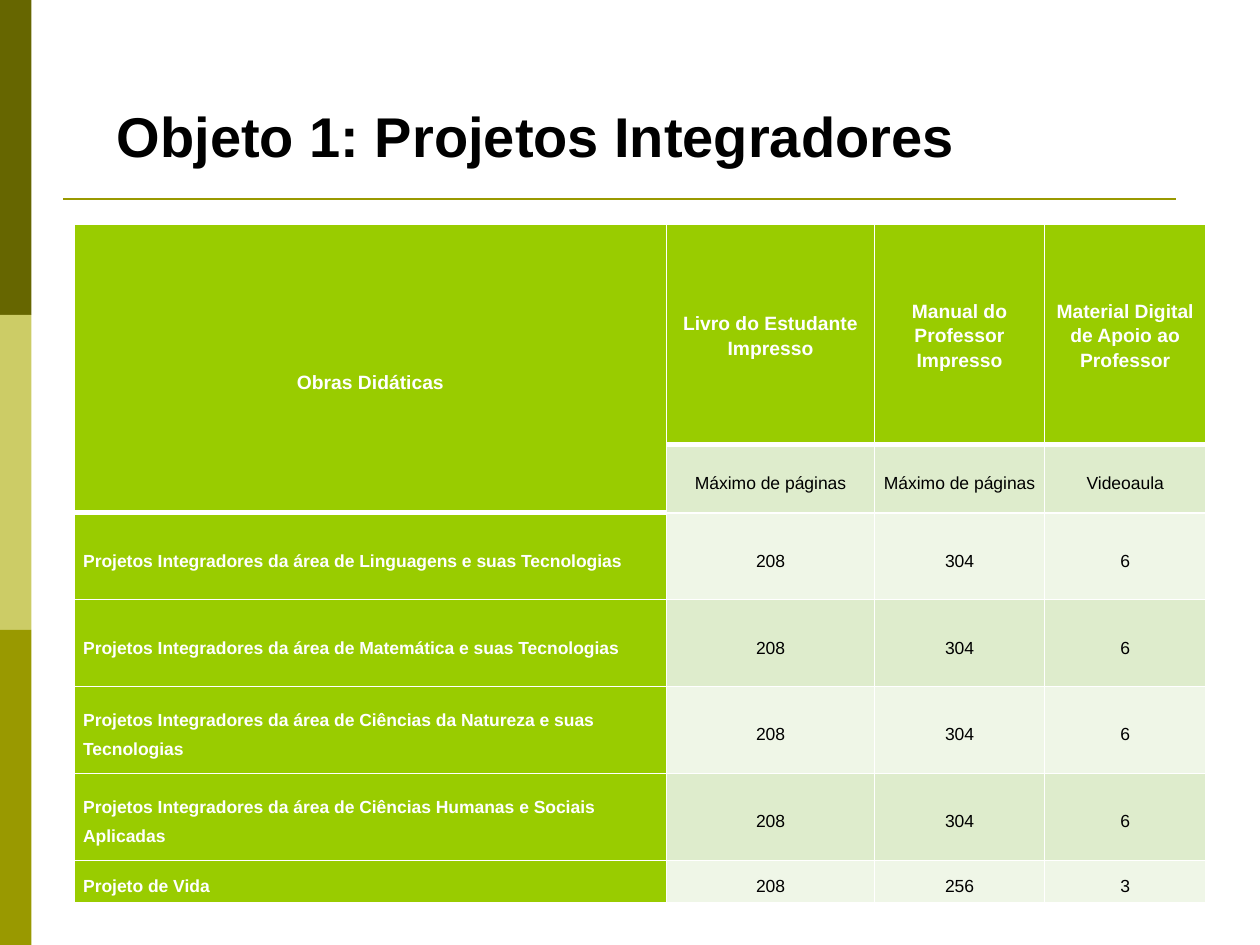
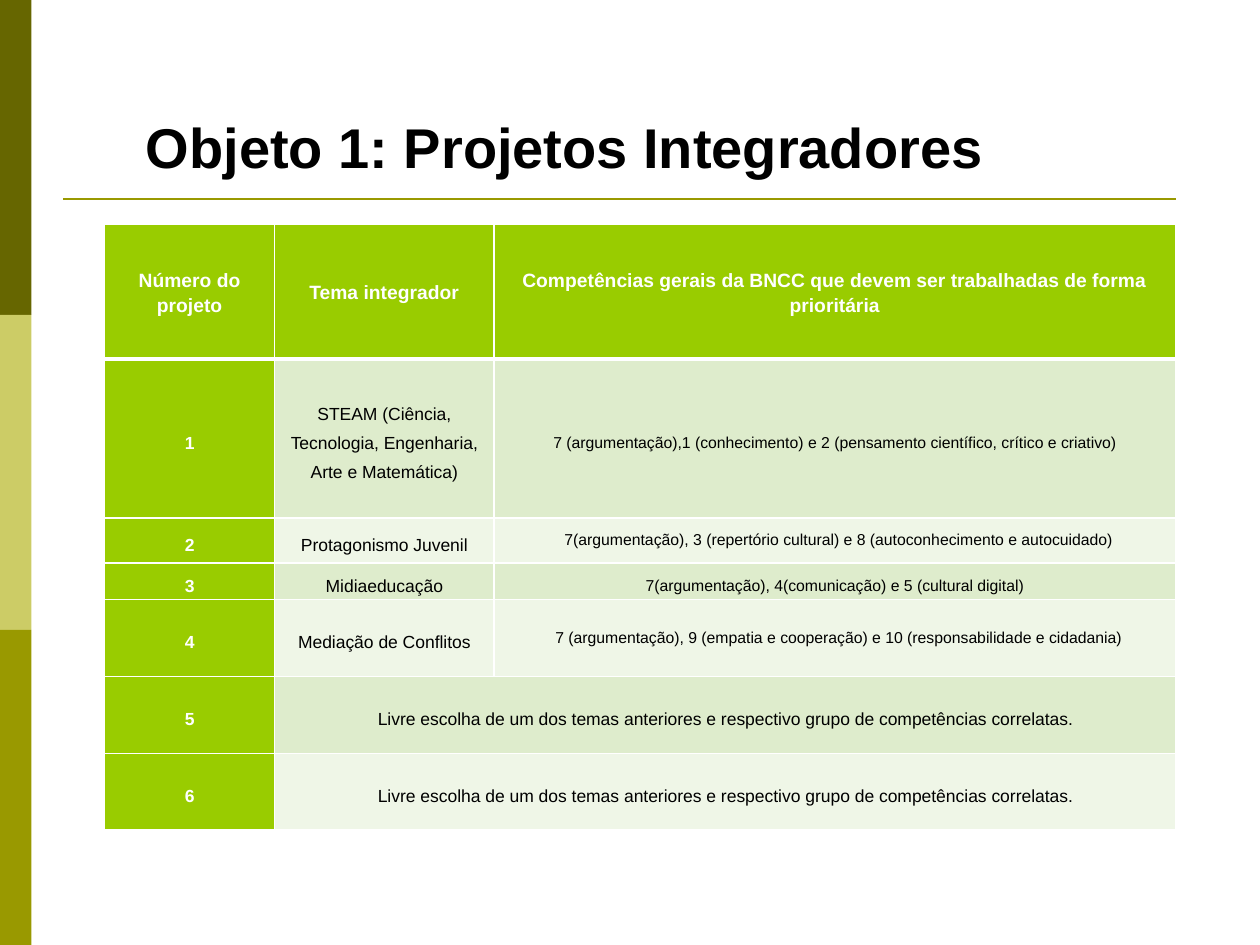
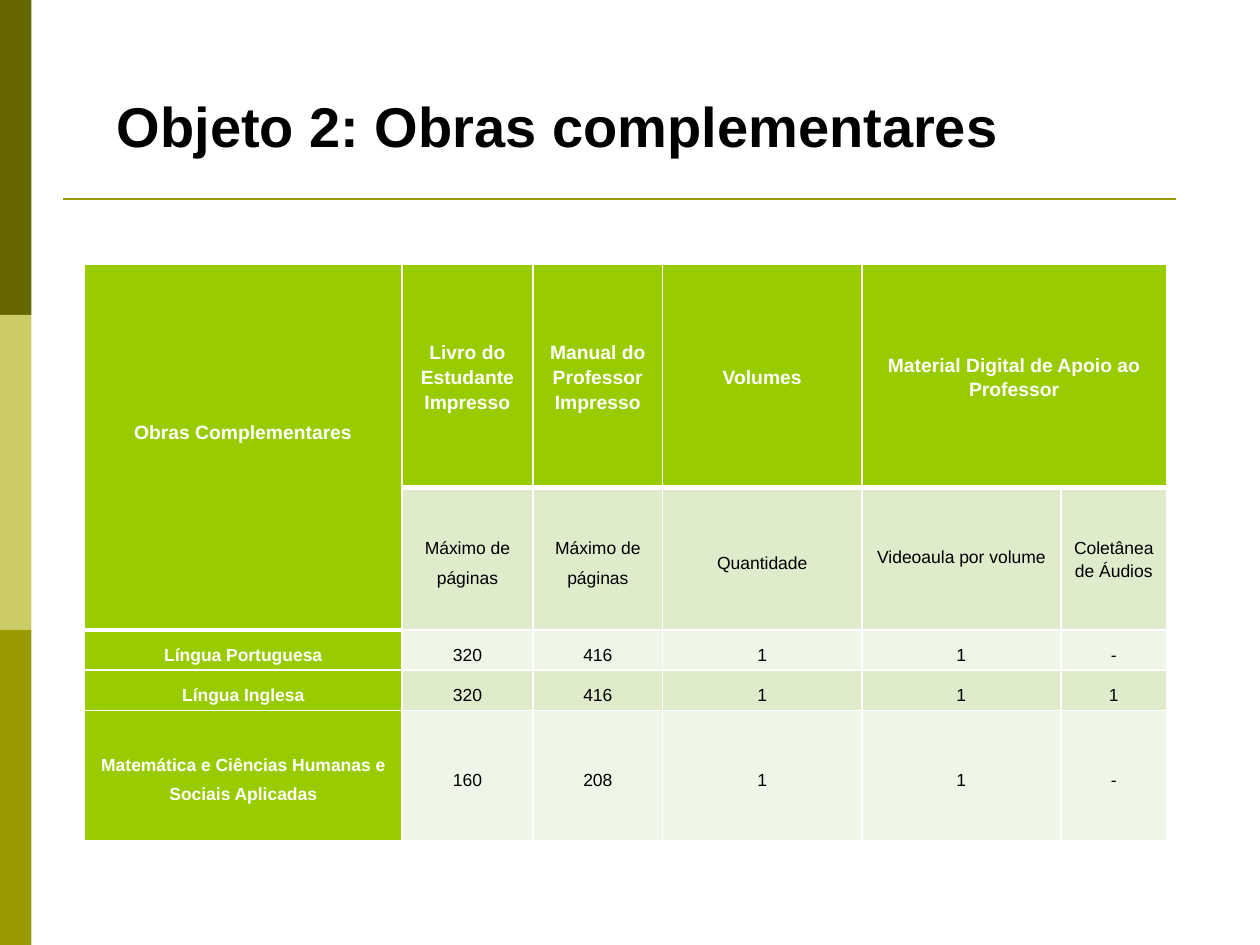
"""Builds three slides of tables on the objects of a textbook programme."""
from dataclasses import dataclass

from lxml import etree
from pptx import Presentation
from pptx.dml.color import RGBColor
from pptx.enum.shapes import MSO_CONNECTOR, MSO_SHAPE
from pptx.enum.text import MSO_ANCHOR, MSO_AUTO_SIZE, PP_ALIGN
from pptx.oxml.ns import qn
from pptx.util import Inches, Pt

RECT = MSO_SHAPE.RECTANGLE
STRAIGHT = MSO_CONNECTOR.STRAIGHT
MIDDLE = MSO_ANCHOR.MIDDLE
GROW = MSO_AUTO_SIZE.SHAPE_TO_FIT_TEXT
LEFT, CENTER = PP_ALIGN.LEFT, PP_ALIGN.CENTER


@dataclass(frozen=True)
class Theme:
    font: str = "Arial"
    bands: tuple = ("666600", "CCCC66", "999900")
    rule: str = "999900"
    head: str = "99CC00"
    stripes: tuple = ("EFF6E7", "DEECCC")
    light: str = "FFFFFF"
    dark: str = "000000"
    title_size: int = 32
    head_size: int = 11
    body_size: int = 10
    note_size: int = 9


T = Theme()


def style_text(p, size, color, bold):
    for r in p.runs:
        r.font.name, r.font.size, r.font.bold = T.font, Pt(size), bold
        r.font.color.rgb = RGBColor.from_string(color)


def add_borders(cell):
    for side, width in (("L", 1), ("R", 1), ("T", 1), ("B", 3)):
        ln = etree.SubElement(cell._tc.get_or_add_tcPr(), qn(f"a:ln{side}"), w=str(Pt(width)))
        fill = etree.SubElement(ln, qn("a:solidFill"))
        etree.SubElement(fill, qn("a:srgbClr"), val=T.light)


FREE_CHOICE = "Livre escolha de um dos temas anteriores e respectivo grupo de competências correlatas."
AREA = "Projetos Integradores da área de "

SLIDES = [
    dict(
        title="Objeto 1: Projetos Integradores", title_box=(0.83, 0.76, 8.27, 0.64),
        origin=(0.59, 1.78), cols=[4.7, 1.65, 1.35, 1.28],
        heights=[1.75, 0.54] + [0.69] * 4 + [0.34],
        first_align=LEFT, sizes={}, merges=[(0, 0, 1, 0)],
        special={(0, 0): dict(margin_top=0.2)},
        rows=[
            ["Obras Didáticas", "Livro do Estudante Impresso", "Manual do Professor Impresso",
             "Material Digital de Apoio ao Professor"],
            ["", "Máximo de páginas", "Máximo de páginas", "Videoaula"],
            [AREA + "Linguagens e suas Tecnologias", "208", "304", "6"],
            [AREA + "Matemática e suas Tecnologias", "208", "304", "6"],
            [AREA + "Ciências da Natureza e suas Tecnologias", "208", "304", "6"],
            [AREA + "Ciências Humanas e Sociais Aplicadas", "208", "304", "6"],
            ["Projeto de Vida", "208", "256", "3"],
        ],
    ),
    dict(
        title="Objeto 1: Projetos Integradores", title_box=(1.06, 0.84, 7.56, 0.64),
        origin=(0.83, 1.78), cols=[1.35, 1.74, 5.41],
        heights=[1.07, 1.26, 0.36, 0.29] + [0.61] * 3,
        first_align=CENTER, sizes={2: T.note_size}, merges=[(5, 1, 5, 2), (6, 1, 6, 2)],
        special={(r, 2): dict(spacing=Pt(9.9), margin_left=0.13) for r in (2, 4)},
        rows=[
            ["Número do projeto", "Tema integrador",
             "Competências gerais da BNCC que devem ser trabalhadas de forma prioritária"],
            ["1", "STEAM (Ciência, Tecnologia, Engenharia, Arte e Matemática)",
             "7 (argumentação),1 (conhecimento) e 2 (pensamento científico, crítico e criativo)"],
            ["2", "Protagonismo Juvenil",
             "7(argumentação), 3 (repertório cultural) e 8 (autoconhecimento e autocuidado)"],
            ["3", "Midiaeducação", "7(argumentação), 4(comunicação) e 5 (cultural digital)"],
            ["4", "Mediação de Conflitos",
             "7 (argumentação), 9 (empatia e cooperação) e 10 (responsabilidade e cidadania)"],
            ["5", FREE_CHOICE, ""],
            ["6", FREE_CHOICE, ""],
        ],
    ),
    dict(
        title="Objeto 2: Obras complementares", title_box=(0.83, 0.68, 7.64, 0.64),
        origin=(0.67, 2.1), cols=[2.52, 1.04, 1.03, 1.58, 1.58, 0.84],
        heights=[1.77, 1.13, 0.32, 0.32, 1.03],
        first_align=CENTER, sizes={}, merges=[(0, 0, 1, 0), (0, 4, 0, 5)],
        special={(0, 0): dict(margin_bottom=0.26),
                 (1, 4): dict(spacing=1.15, margin_bottom=0.05),
                 (1, 5): dict(spacing=1.15)},
        rows=[
            ["Obras Complementares", "Livro do Estudante Impresso", "Manual do Professor Impresso",
             "Volumes", "Material Digital de Apoio ao Professor", ""],
            ["", "Máximo de páginas", "Máximo de páginas", "Quantidade", "Videoaula por volume",
             "Coletânea de Áudios"],
            ["Língua Portuguesa", "320", "416", "1", "1", "-"],
            ["Língua Inglesa", "320", "416", "1", "1", "1"],
            ["Matemática e Ciências Humanas e Sociais Aplicadas", "160", "208", "1", "1", "-"],
        ],
    ),
]

prs = Presentation()
prs.slide_width, prs.slide_height = Inches(10), Inches(7.5)
W, H = prs.slide_width, prs.slide_height
band_w, band_h = W // 40, H // len(T.bands)

for d in SLIDES:
    s = prs.slides.add_slide(prs.slide_layouts[6])

    for i, color in enumerate(T.bands):
        sp = s.shapes.add_shape(RECT, 0, i * band_h, band_w, band_h)
        sp.shadow.inherit = False
        sp.fill.solid()
        sp.fill.fore_color.rgb = RGBColor.from_string(color)
        sp.line.fill.background()

    rule_y = Inches(1.58)
    rule = s.shapes.add_connector(STRAIGHT, 2 * band_w, rule_y, Inches(9.33), rule_y)
    rule.line.color.rgb = RGBColor.from_string(T.rule)
    rule.line.width = Pt(1.5)
    etree.SubElement(rule._element.spPr, qn("a:effectLst"))

    x, y = d["origin"]
    size = Inches(sum(d["cols"])), Inches(sum(d["heights"]))
    table = s.shapes.add_table(len(d["rows"]), len(d["cols"]), Inches(x), Inches(y), *size).table
    for col, width in zip(table.columns, d["cols"]):
        col.width = Inches(width)
    for row, height in zip(table.rows, d["heights"]):
        row.height = Inches(height)
    for r1, c1, r2, c2 in d["merges"]:
        table.cell(r1, c1).merge(table.cell(r2, c2))

    for r, row in enumerate(d["rows"]):
        for c, text in enumerate(row):
            cell = table.cell(r, c)
            opts = d["special"].get((r, c), {})
            is_head = r == 0 or c == 0
            if r == 0:
                add_borders(cell)
            cell.fill.solid()
            cell.fill.fore_color.rgb = RGBColor.from_string(T.head if is_head else T.stripes[r % 2])
            cell.vertical_anchor = MIDDLE
            cell.margin_left = Inches(opts.get("margin_left", 0.07))
            cell.margin_right = Inches(0.07)
            cell.margin_top = Inches(opts.get("margin_top", 0))
            cell.margin_bottom = Inches(opts.get("margin_bottom", 0))
            if cell.is_spanned:
                continue
            p = cell.text_frame.paragraphs[0]
            p.text = text
            p.alignment = d["first_align"] if c == 0 and r > 0 else CENTER
            p.line_spacing = opts.get("spacing", 1.15 if r == 0 else 1.5)
            font_size = T.head_size if r == 0 else d["sizes"].get(c, T.body_size)
            style_text(p, font_size, T.light if is_head else T.dark, is_head)

    sp = s.shapes.add_textbox(*(Inches(v) for v in d["title_box"]))
    tf = sp.text_frame
    tf.word_wrap = True
    tf.auto_size = GROW
    tf.text = d["title"]
    style_text(tf.paragraphs[0], T.title_size, T.dark, True)

prs.save("out.pptx")
